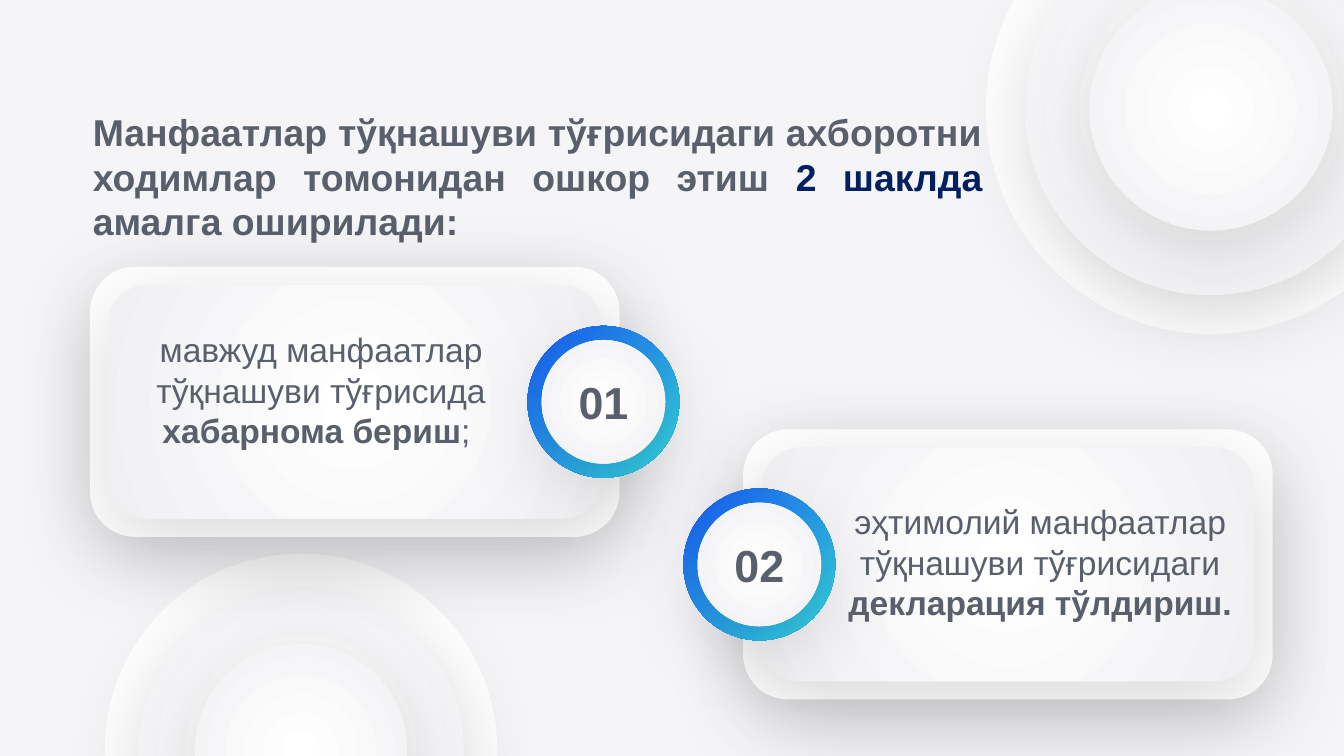
from lxml import etree
from pptx import Presentation
from pptx import util as u
from pptx.dml.color import RGBColor
from pptx.enum import shapes, text
from pptx.oxml.ns import qn

WIDTH = 10
HEIGHT = WIDTH * 9 / 16
GREY, NAVY, WHITE, PALE = "595F6B", "002060", "FFFFFF", "F0F0F3"
BACKGROUND = "F5F5F8"
RING_BLUE, RING_CYAN = "1658F1", "36DBE0"
OVAL = shapes.MSO_SHAPE.OVAL
ROUNDED = shapes.MSO_SHAPE.ROUNDED_RECTANGLE
CARD_SIZE, PANEL_SIZE = (3.94, 2.01), (3.67, 1.74)
BADGE, DISC = 1.13, 0.92
BADGE_INSET = 0.12


def color(value):
    return RGBColor.from_string(value)


def centred(center, size):
    """Left, top, width and height, in EMU, of an area around a center."""
    (x, y), (width, height) = center, size
    return [u.Inches(v) for v in (x - width / 2, y - height / 2, width, height)]


def add_shadow(shape):
    effects = shape._element.spPr.find(qn("a:effectLst"))
    shadow = etree.SubElement(effects, qn("a:outerShdw"), {
        "blurRad": str(u.Pt(45)), "dist": str(u.Pt(11.2)),
        "dir": str(85 * 60000), "algn": "ctr", "rotWithShape": "0"})
    tint = etree.SubElement(shadow, qn("a:srgbClr"), val="000000")
    etree.SubElement(tint, qn("a:alpha"), val="15000")


def fill_gradient(shape, start, end):
    shape.fill.gradient()
    for stop, value in zip(shape.fill.gradient_stops, (start, end)):
        stop.color.rgb = color(value)
    shape.fill.gradient_angle = 315


def fill_radial(shape):
    fill_gradient(shape, WHITE, PALE)
    gradient = shape._element.spPr.find(qn("a:gradFill"))
    gradient.remove(gradient.find(qn("a:lin")))
    circle = etree.SubElement(gradient, qn("a:path"), {"path": "circle"})
    etree.SubElement(circle, qn("a:fillToRect"),
                     {side: "50000" for side in "ltrb"})


def fill_white(shape):
    shape.fill.solid()
    shape.fill.fore_color.rgb = color(WHITE)


def add_form(page, kind, center, size, fill, shadow=True):
    shape = page.shapes.add_shape(kind, *centred(center, size))
    shape.line.fill.background()
    shape.shadow.inherit = False
    fill(shape)
    if shadow:
        add_shadow(shape)


def add_rings(page, center, diameters):
    outer, *inner = diameters
    add_form(page, OVAL, center, (outer, outer), fill_white, shadow=False)
    for diameter in inner:
        add_form(page, OVAL, center, (diameter, diameter), fill_radial)


def add_card(page, center):
    for size, fill in ((CARD_SIZE, fill_white), (PANEL_SIZE, fill_radial)):
        add_form(page, ROUNDED, center, size, fill)


def add_badge(page, center, number):
    add_form(page, OVAL, center, (BADGE, BADGE),
             lambda shape: fill_gradient(shape, RING_BLUE, RING_CYAN),
             shadow=False)
    add_form(page, OVAL, center, (DISC, DISC), fill_radial)
    add_text(page, center, (DISC, 0.58), [(number, {"size": 24, "bold": True})])


def write(box, spans, frame_format, alignment):
    """Fill a box with one paragraph of (wording, font format) spans."""
    frame = box.text_frame
    for name, value in frame_format.items():
        setattr(frame, name, value)
    para = frame.paragraphs[0]
    para.alignment = alignment
    for wording, changes in spans:
        span = para.add_run()
        span.text = wording
        font = {"name": "Arial", "size": 18, "bold": False, "color": GREY} | changes
        span.font.color.rgb = color(font.pop("color"))
        font["size"] = u.Pt(font["size"])
        for name, value in font.items():
            setattr(span.font, name, value)


def add_text(page, center, size, spans):
    box = page.shapes.add_textbox(*centred(center, size))
    write(box, spans, {"word_wrap": True,
                       "vertical_anchor": text.MSO_ANCHOR.MIDDLE},
          text.PP_ALIGN.CENTER)


def set_title(page, area, spans):
    title = page.shapes.title
    for name, value in zip(("left", "top", "width", "height"), area):
        setattr(title, name, u.Inches(value))
    write(title, spans, {"word_wrap": True,
                         "auto_size": text.MSO_AUTO_SIZE.NONE,
                         "vertical_anchor": text.MSO_ANCHOR.TOP},
          text.PP_ALIGN.JUSTIFY)


def main():
    deck = Presentation()
    deck.slide_width, deck.slide_height = u.Inches(WIDTH), u.Inches(HEIGHT)
    page = deck.slides.add_slide(deck.slide_layouts[5])
    page.background.fill.solid()
    page.background.fill.fore_color.rgb = color(BACKGROUND)

    add_rings(page, (9.01, 0.81), (3.35, 2.77, 1.81))
    add_rings(page, (2.24, 5.58), (2.92, 2.42, 1.58))

    notice, declaration = (2.64, 2.99), (7.5, 4.2)
    for card in (declaration, notice):
        add_card(page, card)
    reach = CARD_SIZE[0] / 2 - BADGE_INSET
    add_badge(page, (declaration[0] - reach, declaration[1]), "02")
    add_badge(page, (notice[0] + reach, notice[1]), "01")

    bold = {"bold": True}
    add_text(page, (2.39, 2.9), (2.93, 0.41), [
        ("мавжуд манфаатлар тўқнашуви тўғрисида ", {}),
        ("хабарнома бериш", bold), ("; ", {})])
    add_text(page, (7.74, 4.18), (3.37, 1.01), [
        ("эҳтимолий манфаатлар тўқнашуви тўғрисидаги ", {}),
        ("декларация тўлдириш.", bold)])

    heading = {"size": 20, "bold": True}
    set_title(page, (0.59, 0.76, 6.82, 1.11), [
        ("Манфаатлар тўқнашуви тўғрисидаги ахборотни ходимлар томонидан "
         "ошкор этиш ", heading),
        ("2 шаклда ", heading | {"color": NAVY}),
        ("амалга оширилади:", heading)])
    deck.save("out.pptx")


if __name__ == "__main__":
    main()
